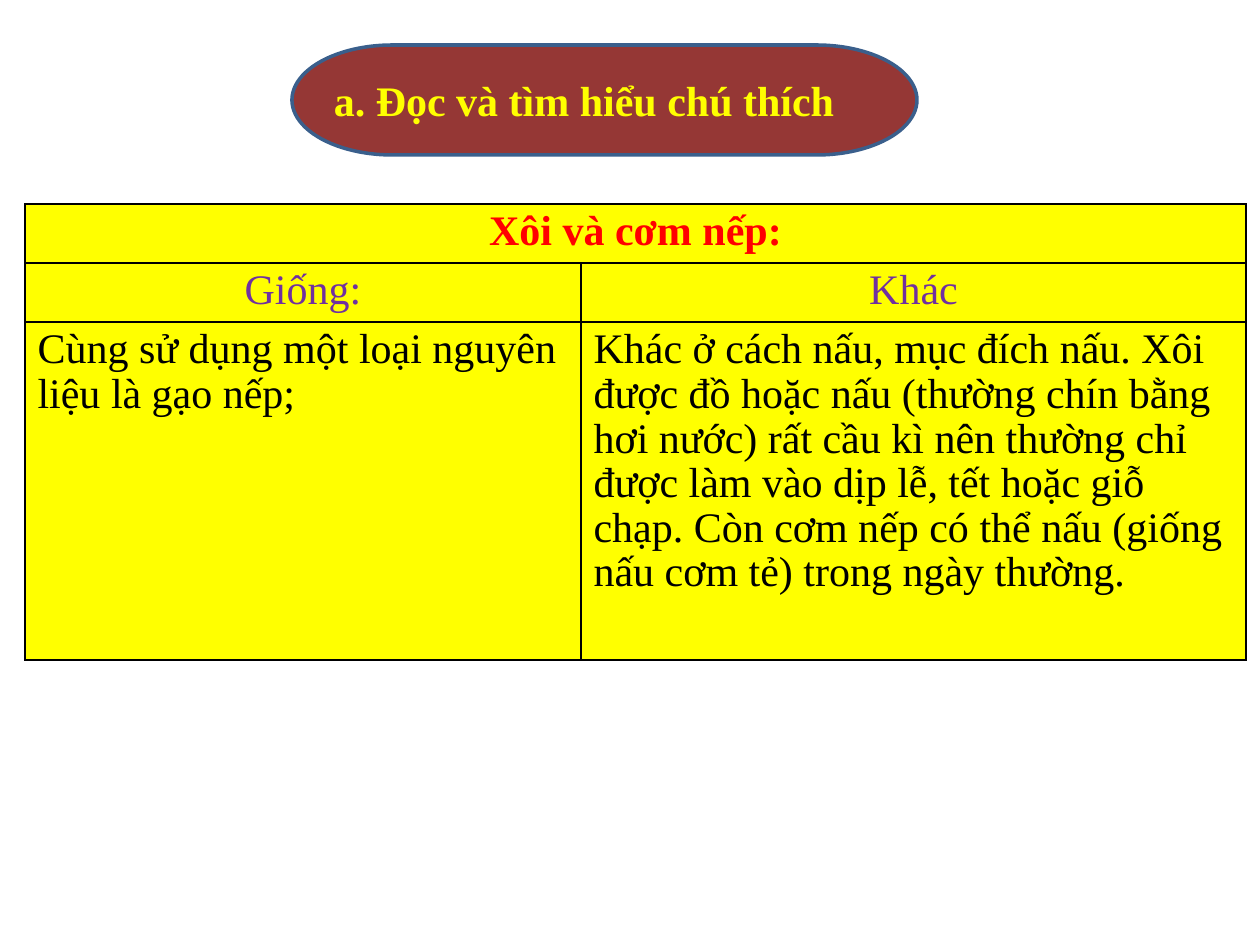
"""Build a slide comparing xôi and cơm nếp under a heading banner."""
import dataclasses
import typing

import lxml.etree
import pptx
import pptx.dml.color
import pptx.enum.shapes
import pptx.enum.text
import pptx.oxml.ns
import pptx.util

EMU_PER_PX = 914400 / 126
ALIGN = pptx.enum.text.PP_ALIGN


@dataclasses.dataclass(frozen=True)
class Theme:
    font: str = "Times New Roman"
    size: int = 24
    line_spacing: float = 0.96
    banner: str = "953735"
    banner_line: str = "3A5F8C"
    yellow: str = "FFFF00"
    red: str = "FF0000"
    purple: str = "7030A0"
    black: str = "000000"


THEME = Theme()


@dataclasses.dataclass(frozen=True)
class Box:
    left: int
    top: int
    width: int
    height: int

    def emu(self) -> list[pptx.util.Emu]:
        return [px(value) for value in dataclasses.astuple(self)]


@dataclasses.dataclass(frozen=True)
class CellText:
    row: int
    column: int
    text: str
    color: str = THEME.black
    bold: bool = False
    align: ALIGN = ALIGN.LEFT


BANNER = Box(292, 45, 625, 110)
TABLE = Box(25, 204, 1221, 456)
COLUMN_WIDTHS = (556, 665)
ROW_HEIGHTS = (59, 59, 338)
CELLS = (
    CellText(0, 0, "Xôi và cơm nếp:", THEME.red, True, ALIGN.CENTER),
    CellText(1, 0, "Giống:", THEME.purple, align=ALIGN.CENTER),
    CellText(1, 1, "Khác", THEME.purple, align=ALIGN.CENTER),
    CellText(2, 0, "Cùng sử dụng một loại nguyên liệu là gạo nếp;"),
    CellText(2, 1, "Khác ở cách nấu, mục đích nấu. Xôi được đồ hoặc nấu "
                   "(thường chín bằng hơi nước) rất cầu kì nên thường chỉ "
                   "được làm vào dịp lễ, tết hoặc giỗ chạp. Còn cơm nếp có "
                   "thể nấu (giống nấu cơm tẻ) trong ngày thường."),
)


def px(value: int) -> pptx.util.Emu:
    return pptx.util.Emu(round(value * EMU_PER_PX))


def rgb(color: str) -> pptx.dml.color.RGBColor:
    return pptx.dml.color.RGBColor.from_string(color)


def write_text(text_frame: typing.Any, text: str, *, color: str,
               bold: bool = False, align: ALIGN = ALIGN.LEFT,
               line_spacing: float = 1.0) -> None:
    text_frame.word_wrap = True
    paragraph = text_frame.paragraphs[0]
    paragraph.alignment = align
    paragraph.line_spacing = line_spacing
    run = paragraph.add_run()
    run.text = text
    run.font.name = THEME.font
    run.font.size = pptx.util.Pt(THEME.size)
    run.font.bold = bold
    run.font.color.rgb = rgb(color)


def draw_banner(slide: typing.Any, box: Box, text: str) -> None:
    kind = pptx.enum.shapes.MSO_SHAPE.FLOWCHART_TERMINATOR
    shape = slide.shapes.add_shape(kind, *box.emu())
    shape.shadow.inherit = False
    shape.fill.solid()
    shape.fill.fore_color.rgb = rgb(THEME.banner)
    shape.line.color.rgb = rgb(THEME.banner_line)
    shape.line.width = pptx.util.Pt(2)
    shape.text_frame.vertical_anchor = pptx.enum.text.MSO_ANCHOR.MIDDLE
    write_text(shape.text_frame, text, color=THEME.yellow, bold=True)


def style_cell(cell: typing.Any) -> None:
    properties = cell._tc.get_or_add_tcPr()
    qualified = pptx.oxml.ns.qn
    for side in ("a:lnL", "a:lnR", "a:lnT", "a:lnB"):
        line = lxml.etree.SubElement(properties, qualified(side),
                                     w=str(pptx.util.Pt(1)))
        fill = lxml.etree.SubElement(line, qualified("a:solidFill"))
        lxml.etree.SubElement(fill, qualified("a:srgbClr"), val=THEME.black)
    cell.fill.solid()
    cell.fill.fore_color.rgb = rgb(THEME.yellow)


def draw_table(slide: typing.Any, box: Box,
               entries: typing.Sequence[CellText]) -> None:
    table = slide.shapes.add_table(
        len(ROW_HEIGHTS), len(COLUMN_WIDTHS), *box.emu()).table
    table.first_row = table.horz_banding = False
    for column, width in zip(table.columns, COLUMN_WIDTHS):
        column.width = px(width)
    for row, height in zip(table.rows, ROW_HEIGHTS):
        row.height = px(height)
    for cell in table.iter_cells():
        style_cell(cell)
    table.cell(0, 0).merge(table.cell(0, 1))
    for entry in entries:
        cell = table.cell(entry.row, entry.column)
        write_text(cell.text_frame, entry.text, color=entry.color,
                   bold=entry.bold, align=entry.align,
                   line_spacing=THEME.line_spacing)


def main() -> None:
    presentation = pptx.Presentation()
    presentation.slide_width = px(1260)
    presentation.slide_height = px(945)
    slide = presentation.slides.add_slide(presentation.slide_layouts[6])
    draw_banner(slide, BANNER, "a. Đọc và tìm hiểu chú thích")
    draw_table(slide, TABLE, CELLS)
    presentation.save("out.pptx")


if __name__ == "__main__":
    main()
